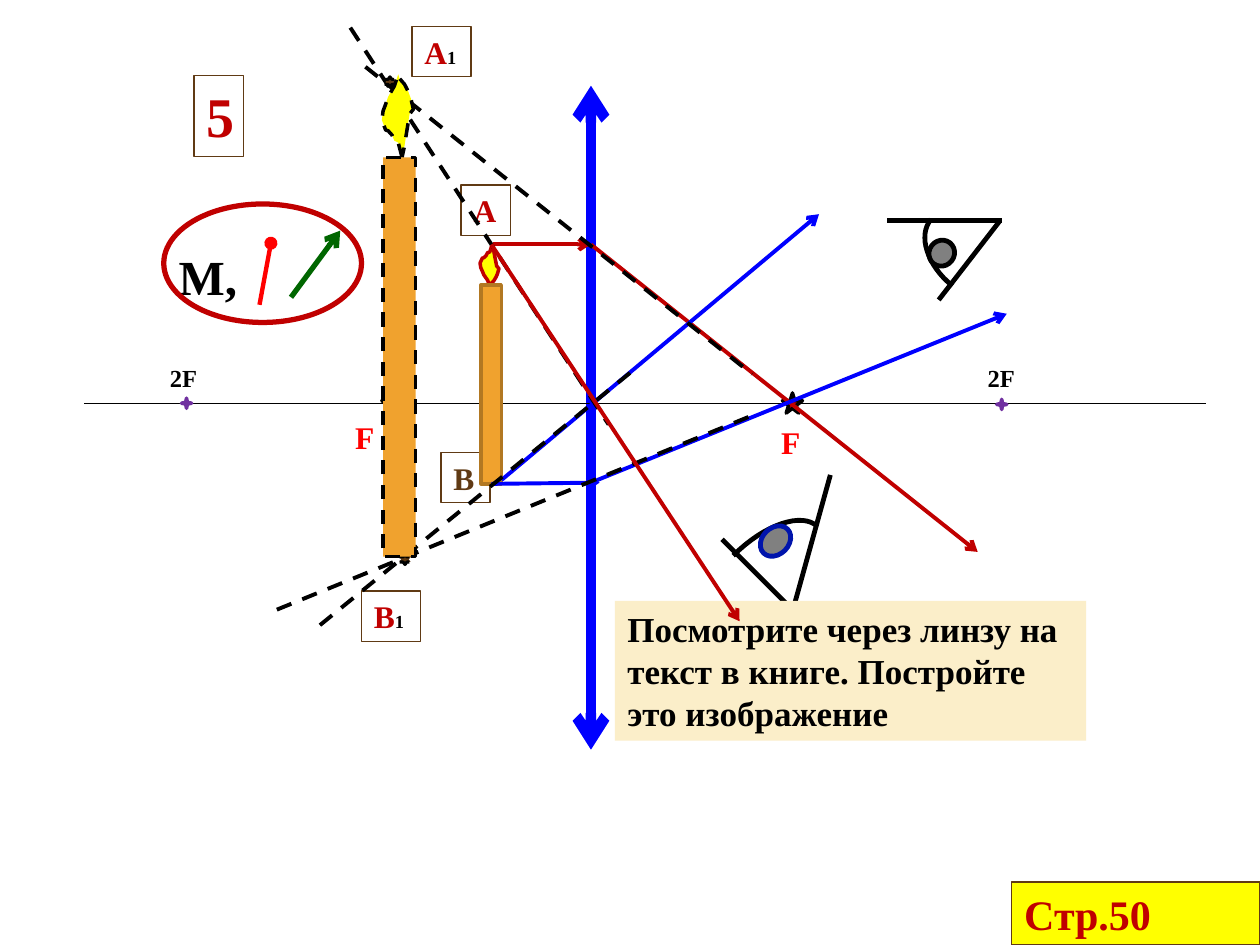
from pptx import Presentation
from pptx.dml.color import RGBColor
from pptx.enum.dml import MSO_LINE
from pptx.enum.shapes import MSO_CONNECTOR, MSO_SHAPE
from pptx.enum.text import MSO_AUTO_SIZE
from pptx.oxml.ns import qn
from pptx.util import Pt
from lxml import etree

STRAIGHT = MSO_CONNECTOR.STRAIGHT
RECT, OVAL = MSO_SHAPE.RECTANGLE, MSO_SHAPE.OVAL
STAR4, STAR5, STAR6 = (MSO_SHAPE.STAR_4_POINT, MSO_SHAPE.STAR_5_POINT,
                       MSO_SHAPE.STAR_6_POINT)
DASH = MSO_LINE.DASH
FIT = MSO_AUTO_SIZE.SHAPE_TO_FIT_TEXT
BOTTOM = 2

THEME = {
    "font": "Times New Roman",
    "black": "000000", "white": "FFFFFF", "red": "FF0000", "dark_red": "C00000",
    "blue": "0000FF", "navy": "0014AC", "green": "006600", "purple": "7030A0",
    "brown": "603A14", "yellow": "FFFF00", "wax": "F0A22E", "wax_edge": "B27822",
    "gray": "808080", "cream": "FBEEC9",
    "tiny": 10.5, "small": 14, "label": 18, "note": 20,
    "page": 24, "big": 28, "number": 32,
}

# Content: all lengths in points
LENS_X, AXIS_Y, TIP_Y = 337.7, 230.4, 139.7

# kind, left, top, size, outline
AXIS_MARKS = [
    (STAR5, 447.1, 224.6, 11.5, "black"), (STAR5, 218.2, 224.6, 11.5, "black"),
    (STAR4, 103.7, 227.5, 5.8, "purple"), (STAR4, 569.5, 228.2, 5.8, "purple"),
]
# text, (left, top, width, height), size, colour, outline, index
LABELS = [
    ("F", (195.8, 235.4, 28.1, 28.8), "label", "red", None, ""),
    ("F", (439.2, 238.3, 28.1, 28.8), "label", "red", None, ""),
    ("2F", (90, 203.8, 33.8, 24.5), "small", "black", None, ""),
    ("2F", (557.3, 203.8, 33.8, 24.5), "small", "black", None, ""),
    ("А", (263.5, 105.8, 28.1, 28.8), "label", "dark_red", "brown", ""),
    ("В", (252, 258.5, 28.1, 28.8), "label", "brown", "brown", ""),
    ("5", (110.9, 43.2, 28.1, 46.1), "number", "dark_red", "brown", ""),
    ("А", (235.4, 15.1, 33.8, 28.8), "label", "dark_red", "brown", "1"),
    ("В", (206.6, 337.7, 33.8, 28.8), "label", "dark_red", "brown", "1"),
]
NOTE = "Посмотрите через линзу на текст в книге. Постройте это изображение"

# Light rays: start, end, colour
RAYS = [
    ((281.5, TIP_Y), (LENS_X, TIP_Y), "dark_red"),
    ((LENS_X, TIP_Y), (558.7, 315.4), "dark_red"),
    ((LENS_X, 275.8), (575.3, 179.3), "blue"),
    ((286.6, 274.3), (468, 122.4), "blue"),
]
BASE_RAY_END = (342.7, 275.8)
CENTRE_RAY = ((280.8, TIP_Y), (422.6, 355), "dark_red")
EXTENSIONS = [
    ((208.8, 38.2), (429.8, 213.8)), ((200.2, 15.8), (347.8, 242.6)),
    ((360, 213.1), (178.6, 360.7)), ((427.7, 238.3), (156.2, 349.2)),
]
IMAGE_POINTS = [(219.6, 43.9), (228.2, 316.8)]

# Eyes: Bezier arc, lids, pupil frame, rotation, pupil outline
EYES = [
    {"arc": [(467.3, 301), (458.6, 292.3), (437, 299.5), (419, 317.5)],
     "lids": [((452.2, 347.8), (412.6, 308.2)), ((452.9, 349.2), (474.5, 271.4))],
     "pupil": (435.6, 299.5, 15.1, 19.4), "turn": 45, "edge": "navy"},
    {"arc": [(532.1, 125.3), (524.2, 134.6), (529.9, 151.9), (544.3, 163.4)],
     "lids": [((571, 126.7), (536.4, 171.4)), ((572.4, 126), (506.9, 126))],
     "pupil": (530.6, 137.5, 15.1, 14.4), "turn": 307.8, "edge": "black"},
]
# Flame outline as fractions of its frame, base at the bottom
FLAME = [
    (.64, 0), (.56, .12), (.52, .18), (.4, .2), (.32, .27), (.2, .32), (.12, .33),
    (0, .45), (.04, .56), (.12, .64), (.2, .73), (.4, .86), (.52, 1), (.56, .95),
    (.72, .88), (.84, .79), (.92, .71), (1, .58), (.88, .52), (.76, .24), (.72, .14),
]


def colour(name):
    return RGBColor.from_string(THEME[name])


def style(box, fill=None, edge=None, width=2, dash=None):
    if fill:
        box.fill.solid()
        box.fill.fore_color.rgb = colour(fill)
    else:
        box.fill.background()
    if edge:
        box.line.color.rgb = colour(edge)
        box.line.width = Pt(width)
        if dash:
            box.line.dash_style = dash
    else:
        box.line.fill.background()


def add_shape(shapes, kind, frame, turn=0, **look):
    box = shapes.add_shape(kind, *map(Pt, frame))
    box.shadow.inherit = False
    box.rotation = turn
    style(box, **look)
    return box


def add_path(shapes, points, close, **look):
    points = [(Pt(x), Pt(y)) for x, y in points]
    builder = shapes.build_freeform(*points[0])
    builder.add_line_segments(points[1:], close=close)
    outline = builder.convert_to_shape()
    outline.shadow.inherit = False
    style(outline, **look)


def add_line(shapes, start, end, ink, width=2.25, dash=None, head=None, tail=None):
    line = shapes.add_connector(STRAIGHT, *map(Pt, (*start, *end)))
    line.line.color.rgb = colour(ink)
    line.line.width = Pt(width)
    if dash:
        line.line.dash_style = dash
    stroke = line.line._get_or_add_ln()
    for tag, kind in (("a:headEnd", head), ("a:tailEnd", tail)):
        if kind:
            etree.SubElement(stroke, qn(tag), type=kind)
    etree.SubElement(line._element.spPr, qn("a:effectLst"))
    return line


def add_text(shapes, text, frame, size="label", ink="black", index="", **look):
    box = shapes.add_textbox(*map(Pt, frame))
    style(box, **look)
    box.text_frame.word_wrap = True
    box.text_frame.auto_size = FIT
    para = box.text_frame.paragraphs[0]
    for part, scale, shade in ((text, size, ink), (index, "tiny", "black")):
        if part:
            span = para.add_run()
            span.text = part
            span.font.name = THEME["font"]
            span.font.size = Pt(THEME[scale])
            span.font.bold = True
            span.font.color.rgb = colour(shade)


def add_candle(shapes, flame, body, flip, flame_edge, body_edge, dash=None):
    group = shapes.add_group_shape().shapes
    left, top, width, height = flame
    outline = [(left + u * width, top + (1 - v if flip else v) * height)
               for u, v in FLAME]
    add_path(group, outline, True, fill="yellow", edge=flame_edge, dash=dash)
    return add_shape(group, RECT, body, fill="wax", edge=body_edge, dash=dash)


def bezier(a, b, c, d, steps=16):
    for t in (step / steps for step in range(steps + 1)):
        s = 1 - t
        weights = (s ** 3, 3 * s * s * t, 3 * s * t * t, t ** 3)
        yield tuple(sum(w * p[axis] for w, p in zip(weights, (a, b, c, d)))
                    for axis in (0, 1))


def add_eye(shapes, eye):
    group = shapes.add_group_shape().shapes
    add_path(group, list(bezier(*eye["arc"])), False,
             fill="white", edge="black", width=2.75)
    for start, end in eye["lids"]:
        add_line(group, start, end, "black", 2.75)
    add_shape(group, OVAL, eye["pupil"], eye["turn"],
              fill="gray", edge=eye["edge"], width=2.75)


def main():
    deck = Presentation()
    deck.slide_width, deck.slide_height = Pt(720), Pt(540)
    page = deck.slides.add_slide(deck.slide_layouts[6])
    shapes = page.shapes

    # Lens and optical axis
    add_line(shapes, (LENS_X, 49), (LENS_X, 428.4), "blue", 6,
             head="arrow", tail="arrow")
    add_line(shapes, (48.2, AXIS_Y), (689, AXIS_Y), "black", 0.79)
    for kind, left, top, size, edge in AXIS_MARKS:
        add_shape(shapes, kind, (left, top, size, size), fill="dark_red", edge=edge)
    for text, frame, size, ink, edge, index in LABELS:
        add_text(shapes, text, frame, size, ink, index, edge=edge, width=0.75)

    # Candle and its rays
    candle = add_candle(shapes, (274.3, TIP_Y, 10.8, 23.8), (275, 162.7, 11.5, 113.8),
                        False, "dark_red", "wax_edge")
    for start, end, ink in RAYS:
        add_line(shapes, start, end, ink, tail="arrow")
    base_ray = add_line(shapes, (280.8, 276.5), BASE_RAY_END, "blue", tail="arrow")
    base_ray.begin_connect(candle, BOTTOM)

    # Observers, backward extensions and the virtual image
    for eye in EYES:
        add_eye(shapes, eye)
    for start, end in EXTENSIONS:
        add_line(shapes, start, end, "black", dash=DASH)
    for left, top in IMAGE_POINTS:
        add_shape(shapes, STAR6, (left, top, 6.5, 5.8), fill="brown",
                  edge="black", width=1.75, dash=DASH)
    add_candle(shapes, (218.2, 42.5, 18, 47.5), (218.9, 90, 18.7, 228.2),
               True, "black", "black", DASH)

    # Badge with the magnifier sign
    add_text(shapes, "М,", (95, 137.5, 50.4, 41), "big", fill="white")
    add_line(shapes, (148.3, 174.2), (154.8, 139), "red", 2.5, tail="oval")
    add_line(shapes, (166.3, 169.9), (194.4, 131.8), "green", 3, tail="arrow")
    add_shape(shapes, OVAL, (93.6, 116.6, 113, 67.7), edge="dark_red", width=3)

    # Task, ray through the lens centre and page reference
    add_text(shapes, NOTE, (351.4, 343.4, 269.3, 79.9), "note", fill="cream")
    add_line(shapes, *CENTRE_RAY, tail="arrow")
    add_text(shapes, "Стр.50", (578.2, 504, 141.8, 36), "page", "dark_red",
             fill="yellow", edge="brown", width=0.75)
    deck.save("out.pptx")


if __name__ == "__main__":
    main()
